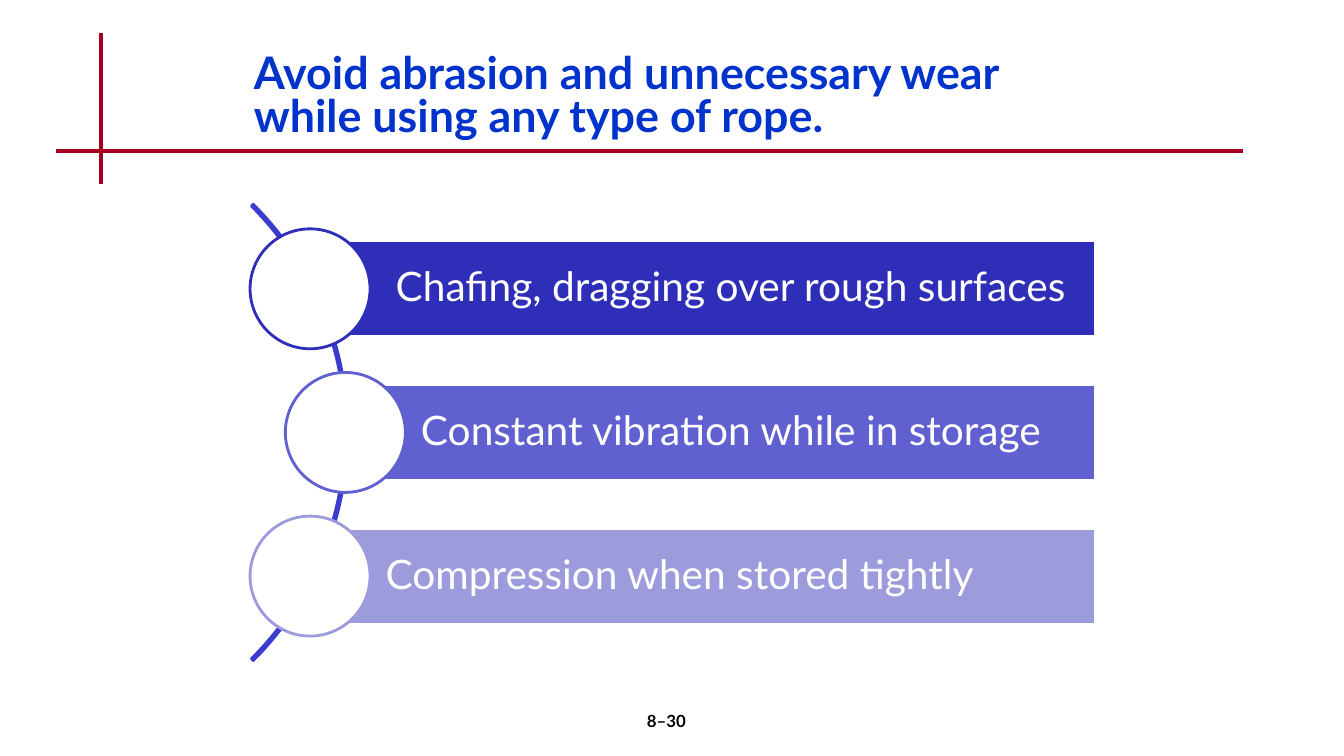
"""Build the rope care slide with three causes of wear along an arc."""
from lxml.etree import SubElement
from pptx import Presentation
from pptx.dml.color import RGBColor
from pptx.enum.shapes import MSO_CONNECTOR, MSO_SHAPE
from pptx.enum.text import MSO_ANCHOR, PP_ALIGN
from pptx.oxml.ns import qn
from pptx.util import Inches, Pt

WHITE = RGBColor(0xFF, 0xFF, 0xFF)
BLACK = RGBColor(0x00, 0x00, 0x00)
CRIMSON = RGBColor(0xA5, 0x00, 0x21)
TITLE_BLUE = RGBColor(0x00, 0x33, 0xCC)
ARC_BLUE = RGBColor(0x3B, 0x3B, 0xCD)
DARK_BLUE = RGBColor(0x2E, 0x2E, 0xB9)
MIDDLE_BLUE = RGBColor(0x60, 0x60, 0xD0)
LIGHT_BLUE = RGBColor(0x9C, 0x9C, 0xDD)

BAR_TOP, BAR_STEP, BAR_HEIGHT, BAR_RIGHT = 2.39, 1.425, 0.95, 10.86
CIRCLE_SIZE = 1.19
CAUSES = [
    ("Chafing, dragging over rough surfaces", DARK_BLUE, 2.48, 0.85),
    ("Constant vibration while in storage", MIDDLE_BLUE, 2.83, 0.75),
    ("Compression when stored tightly", LIGHT_BLUE, 2.48, 0.75),
]


class RopeSlide:
    """Hold the slide and its shared style."""

    font_name = "Lato"

    def __init__(self, presentation):
        """Add a blank slide to the presentation."""
        self.slide = presentation.slides.add_slide(presentation.slide_layouts[6])

    def rule(self, start, end):
        """Draw a straight crimson rule."""
        points = [Inches(value) for value in (*start, *end)]
        connector = self.slide.shapes.add_connector(MSO_CONNECTOR.STRAIGHT, *points)
        connector.line.color.rgb = CRIMSON
        connector.line.width = Pt(3)
        SubElement(connector._element.spPr, qn("a:effectLst"))

    def shape(self, kind, box, fill, line):
        """Draw a preset shape, unfilled when fill is None."""
        shape = self.slide.shapes.add_shape(kind, *[Inches(value) for value in box])
        shape.shadow.inherit = False
        if fill is None:
            shape.fill.background()
        else:
            shape.fill.solid()
            shape.fill.fore_color.rgb = fill
        shape.line.color.rgb = line
        shape.line.width = Pt(2)
        return shape

    def label(self, shape, text, size, color, frame_format, paragraph_format, bold=False):
        """Put one formatted paragraph into a shape."""
        frame = shape.text_frame
        frame.text = text
        paragraph = frame.paragraphs[0]
        font_format = {"name": self.font_name, "size": Pt(size), "bold": bold}
        for target, values in (
            (frame, {"word_wrap": True, **frame_format}),
            (paragraph, paragraph_format),
            (paragraph.font, font_format),
        ):
            for name, value in values.items():
                setattr(target, name, value)
        paragraph.font.color.rgb = color

    def text(self, box, text, size, color, paragraph_format):
        """Add a bold text box."""
        shape = self.slide.shapes.add_textbox(*[Inches(value) for value in box])
        frame_format = {"vertical_anchor": MSO_ANCHOR.TOP}
        self.label(shape, text, size, color, frame_format, paragraph_format, bold=True)

    def arc(self, box):
        """Draw the thin arc that joins the circles."""
        arc = self.shape(MSO_SHAPE.BLOCK_ARC, box, None, ARC_BLUE)
        for index, value in enumerate((189, 27, 0.004)):
            arc.adjustments[index] = value

    def cause(self, top, text, color, circle_left, inset):
        """Draw a labelled bar with a circle over its left end."""
        left = circle_left + CIRCLE_SIZE / 2
        box = (left, top, BAR_RIGHT - left, BAR_HEIGHT)
        bar = self.shape(MSO_SHAPE.RECTANGLE, box, color, WHITE)
        frame_format = {
            "vertical_anchor": MSO_ANCHOR.MIDDLE,
            "margin_left": Inches(inset),
            "margin_right": Inches(0.08),
            "margin_top": Inches(0.08),
            "margin_bottom": Inches(0.08),
        }
        paragraph_format = {"alignment": PP_ALIGN.LEFT, "line_spacing": 0.9}
        self.label(bar, text, 29, WHITE, frame_format, paragraph_format)
        circle_top = top + (BAR_HEIGHT - CIRCLE_SIZE) / 2
        circle_box = (circle_left, circle_top, CIRCLE_SIZE, CIRCLE_SIZE)
        self.shape(MSO_SHAPE.OVAL, circle_box, WHITE, color)


def main():
    """Build and save the presentation."""
    presentation = Presentation()
    presentation.slide_width = Inches(13.33)
    presentation.slide_height = Inches(7.5)
    slide = RopeSlide(presentation)
    slide.rule((1, 0.33), (1, 1.83))
    slide.rule((0.56, 1.5), (12.33, 1.5))
    slide.arc((-2.95, 1.09, 6.4, 6.4))
    for index, cause in enumerate(CAUSES):
        slide.cause(BAR_TOP + index * BAR_STEP, *cause)
    slide.text(
        (2.42, 0.5, 8.5, 1),
        "Avoid abrasion and unnecessary wear while using any type of rope.",
        32,
        TITLE_BLUE,
        {"alignment": PP_ALIGN.LEFT, "line_spacing": 0.8},
    )
    slide.text((5.22, 7, 2.78, 0.5), "8–30", 12, BLACK, {"alignment": PP_ALIGN.CENTER})
    presentation.save("out.pptx")


if __name__ == "__main__":
    main()
